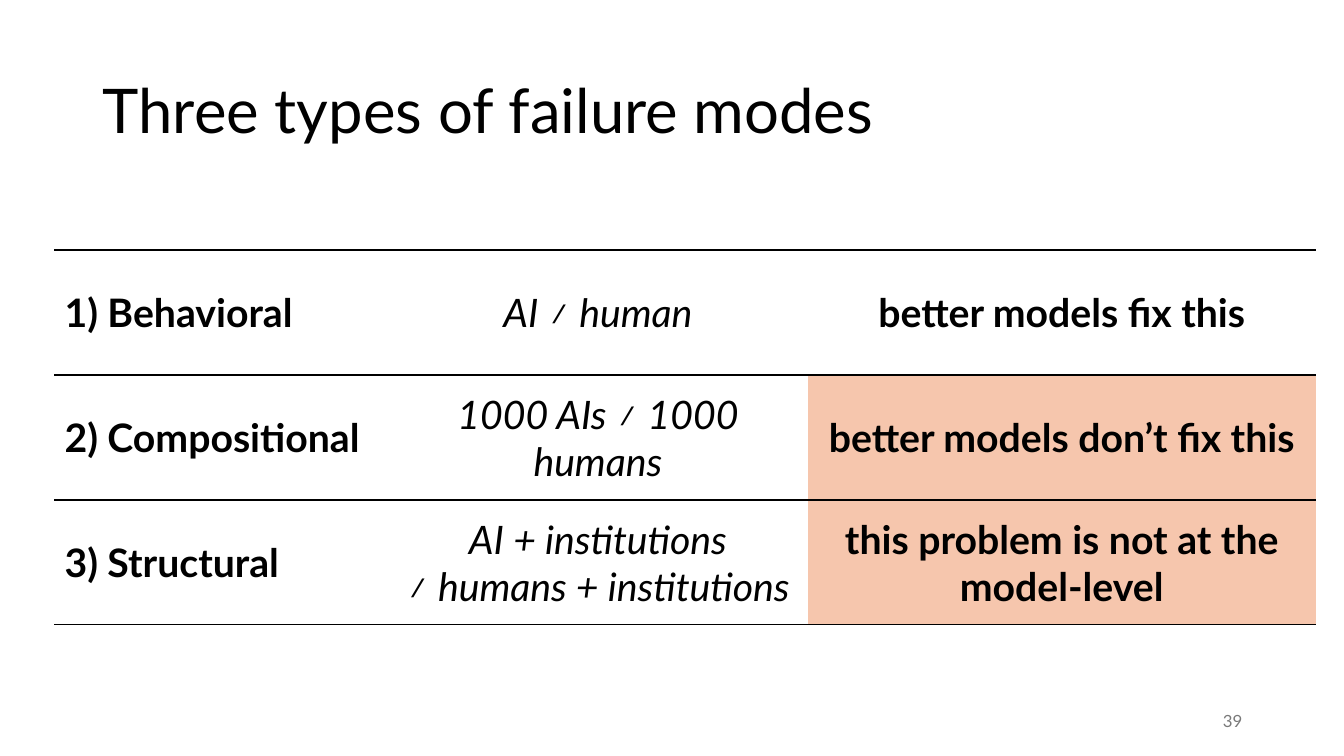
from dataclasses import dataclass

from lxml import etree
from pptx import Presentation
from pptx.dml.color import RGBColor
from pptx.enum.text import MSO_ANCHOR, PP_ALIGN
from pptx.oxml.ns import qn
from pptx.util import Inches, Pt

MIDDLE = MSO_ANCHOR.MIDDLE
LEFT, CENTER, RIGHT = PP_ALIGN.LEFT, PP_ALIGN.CENTER, PP_ALIGN.RIGHT


@dataclass(frozen=True)
class Theme:
    font: str = "Lato"
    ink: str = "000000"
    gray: str = "797979"
    peach: str = "F6C6AD"
    title: int = 44
    body: int = 28
    small: int = 12
    rule: int = 1


THEME = Theme()

COLS = (3.31, 4.16, 5.04)
MODES = (
    ("1) Behavioral", "AI ≠ human", "better models fix this"),
    ("2) Compositional", "1000 AIs ≠ 1000 humans", "better models don’t fix this"),
    ("3) Structural", "AI + institutions\v≠ humans + institutions",
     "this problem is not at the model-level"),
)
# Alignment, bold and italic of each column
STYLES = ((LEFT, True, False), (CENTER, False, True), (CENTER, True, False))


def write(frame, text, size, color, align=LEFT, bold=False, italic=False):
    """Fill a text frame with one paragraph in one style."""
    para = frame.paragraphs[0]
    para.text = text
    para.alignment = align
    for run in para.runs:
        font = run.font
        font.name = THEME.font
        font.size = Pt(size)
        font.bold = bold
        font.italic = italic
        font.color.rgb = RGBColor.from_string(color)
    return para


def add_label(slide, box, text, size, color, align=LEFT):
    """Place a middle-anchored line of text in the box."""
    frame = slide.shapes.add_textbox(*map(Inches, box)).text_frame
    frame.word_wrap = True
    frame.vertical_anchor = MIDDLE
    return write(frame, text, size, color, align)


def set_rules(cell):
    """Draw lines above and below the cell, none at its sides."""
    props = cell._tc.get_or_add_tcPr()
    for side in ("L", "R", "T", "B"):
        line = etree.SubElement(props, qn(f"a:ln{side}"), w=str(Pt(THEME.rule)))
        if side in "LR":
            etree.SubElement(line, qn("a:noFill"))
        else:
            fill = etree.SubElement(line, qn("a:solidFill"))
            etree.SubElement(fill, qn("a:srgbClr"), val=THEME.ink)


def add_modes(slide, box):
    """Build the table of failure modes in the box."""
    shape = slide.shapes.add_table(len(MODES), len(COLS), *map(Inches, box))
    table = shape.table
    table.first_row = table.horz_banding = False
    for col, width in zip(table.columns, COLS):
        col.width = Inches(width)
    for i, texts in enumerate(MODES):
        table.rows[i].height = Inches(box[3] / len(MODES))
        for j, (text, style) in enumerate(zip(texts, STYLES)):
            cell = table.cell(i, j)
            cell.vertical_anchor = MIDDLE
            write(cell.text_frame, text, THEME.body, THEME.ink, *style)
            set_rules(cell)
            # Shade the verdicts that better models cannot change
            if i > 0 and j == 2:
                cell.fill.solid()
                cell.fill.fore_color.rgb = RGBColor.from_string(THEME.peach)
            else:
                cell.fill.background()


def main():
    deck = Presentation()
    deck.slide_width, deck.slide_height = Inches(13.33), Inches(7.5)
    slide = deck.slides.add_slide(deck.slide_layouts[6])

    # Title
    title = add_label(slide, (0.92, 0.4, 11.5, 1.45),
                      "Three types of failure modes", THEME.title, THEME.ink)
    title.line_spacing = 0.9

    # Table and page number
    add_modes(slide, (0.54, 2.48, sum(COLS), 3.72))
    add_label(slide, (9.42, 6.95, 3, 0.4), "39", THEME.small, THEME.gray, RIGHT)

    deck.save("out.pptx")


if __name__ == "__main__":
    main()
